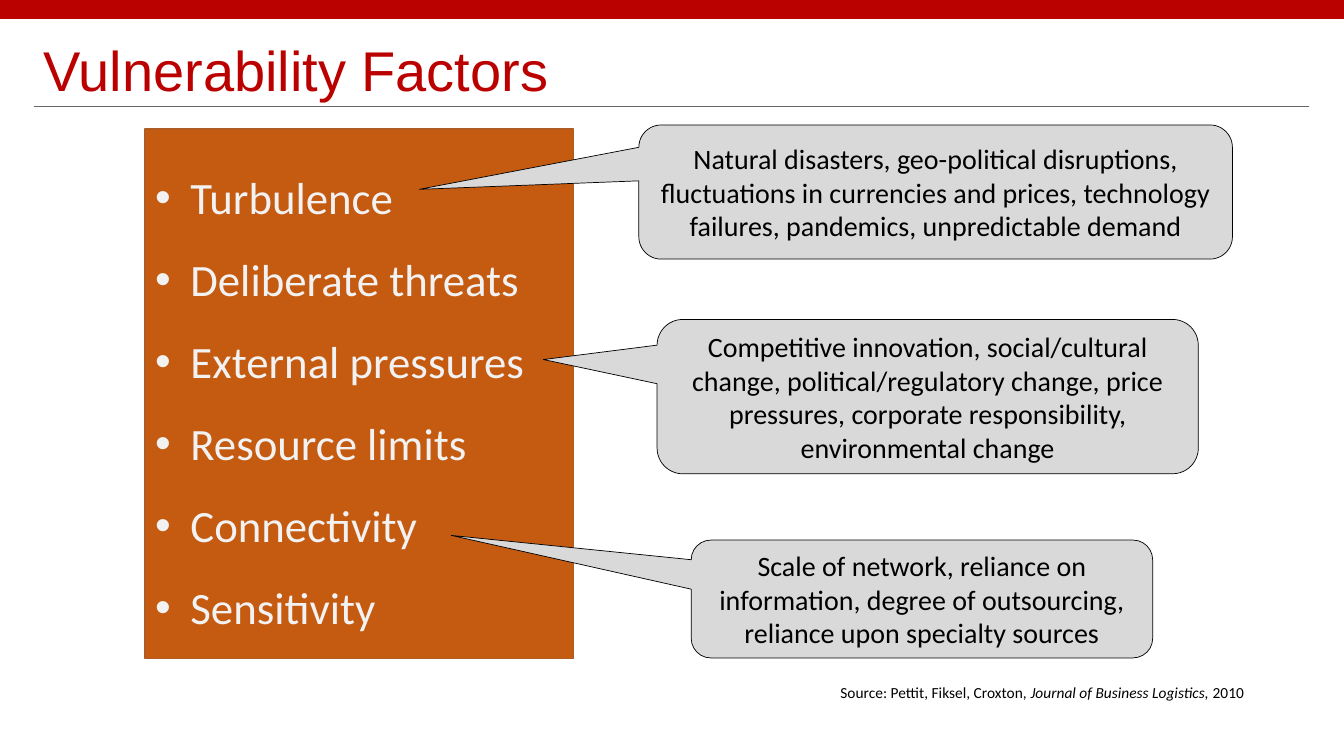
"""Build the Vulnerability Factors slide."""
from dataclasses import dataclass

from lxml import etree
from pptx import Presentation
from pptx import util as u
from pptx.dml.color import RGBColor as Rgb
from pptx.enum import shapes, text
from pptx.oxml import ns


@dataclass(frozen=True)
class Theme:
    red: str = "BB0000"
    rule: str = "666666"
    rust: str = "C55A11"
    edge: str = "AF5C24"
    pale: str = "F2F2F2"
    grey: str = "D9D9D9"
    black: str = "000000"
    head: str = "Arial"
    body: str = "Calibri"
    title: int = 40
    list: int = 32
    note: int = 20
    small: int = 11


def add_run(para, words, size, ink, face=Theme.body, slant=False):
    run = para.add_run()
    run.text = words
    font = run.font
    font.size, font.name, font.italic = u.Pt(size), face, slant
    font.color.rgb = Rgb.from_string(ink)


def add_box(kind, place, fill, line=None, width=0.5):
    box = slide.shapes.add_shape(kind, *map(u.Cm, place))
    box.shadow.inherit = False
    box.fill.solid()
    box.fill.fore_color.rgb = Rgb.from_string(fill)
    if line:
        box.line.color.rgb = Rgb.from_string(line)
        box.line.width = u.Pt(width)
    else:
        box.line.fill.background()
    box.text_frame.word_wrap = True
    return box


theme = Theme()
deck = Presentation()
deck.slide_width, deck.slide_height = u.Cm(33.87), u.Cm(19.05)
slide = deck.slides.add_slide(deck.slide_layouts[5])

add_box(shapes.MSO_SHAPE.RECTANGLE, (0, 0, 33.87, 0.48), theme.red)
rule = slide.shapes.add_connector(
    shapes.MSO_CONNECTOR.STRAIGHT, u.Cm(0.86), u.Cm(2.69), u.Cm(33), u.Cm(2.69))
rule.line.color.rgb = Rgb.from_string(theme.rule)
rule.line.width = u.Pt(0.5)
etree.SubElement(rule._element.spPr, ns.qn("a:effectLst"))

title = slide.shapes.title
title.left, title.top = u.Cm(0.84), u.Cm(0.69)
title.width, title.height = u.Cm(20.85), u.Cm(2.06)
frame = title.text_frame
frame.auto_size = text.MSO_AUTO_SIZE.NONE
frame.vertical_anchor = text.MSO_ANCHOR.BOTTOM
para = frame.paragraphs[0]
para.alignment = text.PP_ALIGN.LEFT
para.line_spacing = 0.9
add_run(para, "Vulnerability Factors", theme.title, theme.red, theme.head)

factors = ["Turbulence", "Deliberate threats", "External pressures",
           "Resource limits", "Connectivity", "Sensitivity"]
panel = add_box(shapes.MSO_SHAPE.RECTANGLE, (3.66, 3.25, 10.8, 13.34),
                theme.rust, theme.edge, 1)
frame = panel.text_frame
frame.vertical_anchor = text.MSO_ANCHOR.MIDDLE
for i, factor in enumerate(factors):
    para = frame.add_paragraph() if i else frame.paragraphs[0]
    para.alignment = text.PP_ALIGN.LEFT
    para.line_spacing = 1.3
    para.space_after = u.Pt(8.7)
    props = para._p.get_or_add_pPr()
    props.set("marL", str(u.Cm(0.89)))
    props.set("indent", str(u.Cm(-0.89)))
    etree.SubElement(props, ns.qn("a:buFont"), typeface=theme.head)
    etree.SubElement(props, ns.qn("a:buChar"), char="•")
    add_run(para, factor, theme.list, theme.pale)

source = slide.shapes.add_textbox(*map(u.Cm, (18.42, 17.09, 13.18, 0.74)))
frame = source.text_frame
frame.word_wrap = True
para = frame.paragraphs[0]
para.alignment = text.PP_ALIGN.RIGHT
for words, slant in [("Source: Pettit, Fiksel, Croxton, ", False),
                     ("Journal of Business Logistics,", True),
                     (" 2010", False)]:
    add_run(para, words, theme.small, theme.black, slant=slant)

notes = [
    ((16.1, 3.15, 14.96, 3.38), (-0.87, -0.02),
     "Natural disasters, geo-political disruptions, fluctuations in currencies "
     "and prices, technology failures, pandemics, unpredictable demand"),
    ((16.56, 8.05, 13.64, 3.89), (-0.71, -0.24),
     "Competitive innovation, social/cultural change, political/regulatory change, "
     "price pressures, corporate responsibility, environmental change"),
    ((17.42, 13.61, 11.63, 2.97), (-1.02, -0.54),
     "Scale of network, reliance on information, degree of outsourcing, "
     "reliance upon specialty sources"),
]
for place, tip, words in notes:
    note = add_box(shapes.MSO_SHAPE.ROUNDED_RECTANGULAR_CALLOUT, place,
                   theme.grey, theme.black)
    note.adjustments[0], note.adjustments[1] = tip
    frame = note.text_frame
    frame.vertical_anchor = text.MSO_ANCHOR.MIDDLE
    para = frame.paragraphs[0]
    para.alignment = text.PP_ALIGN.CENTER
    add_run(para, words, theme.note, theme.black)

deck.save("out.pptx")
